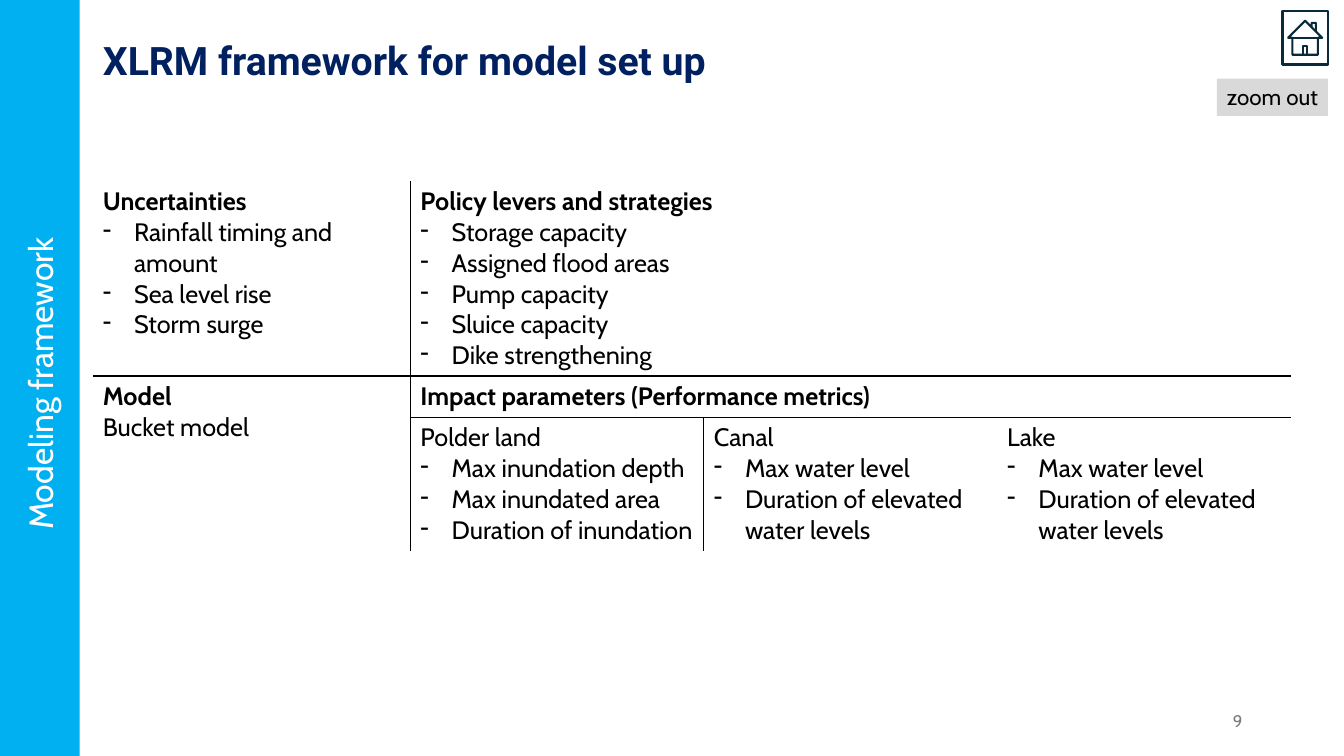
from lxml.etree import SubElement
from pptx import Presentation
from pptx.dml.color import RGBColor
from pptx.enum.shapes import MSO_SHAPE
from pptx.enum.text import MSO_ANCHOR, PP_ALIGN
from pptx.oxml import parse_xml
from pptx.oxml.ns import nsdecls, qn
from pptx.util import Inches, Pt

NO_STYLE_NO_GRID = "{2D5ABB26-0587-4C30-8999-92F81FD0307C}"


def style(paragraph, size, color, bold=False, name="Cabin"):
    font = paragraph.font
    font.name, font.size, font.bold = name, Pt(size), bold
    font.color.rgb = RGBColor.from_string(color)


def add_label(left, top, width, height, text, size, color):
    box = page.shapes.add_textbox(Inches(left), Inches(top), Inches(width), Inches(height))
    box.text_frame.word_wrap = True
    box.text_frame.text = text
    style(box.text_frame.paragraphs[0], size, color)
    return box


deck = Presentation()
deck.slide_width, deck.slide_height = Inches(13.33), Inches(7.5)
page = deck.slides.add_slide(deck.slide_layouts[5])

# Title
title = page.shapes.title
title.left, title.top, title.width, title.height = map(Inches, (0.92, 0.1, 11.5, 1.05))
title.text_frame.text = "XLRM framework for model set up"
title.text_frame.vertical_anchor = MSO_ANCHOR.MIDDLE
heading = title.text_frame.paragraphs[0]
heading.alignment, heading.line_spacing = PP_ALIGN.LEFT, 0.9
style(heading, 28, "002060", bold=True, name="Roboto")

# XLRM table: (row, column) -> bold heading, plain line, dashed items
cells = {
    (0, 0): ("Uncertainties", "",
             ["Rainfall timing and amount", "Sea level rise", "Storm surge"]),
    (0, 1): ("Policy levers and strategies", "",
             ["Storage capacity", "Assigned flood areas", "Pump capacity",
              "Sluice capacity", "Dike strengthening"]),
    (1, 0): ("Model", "Bucket model", []),
    (1, 1): ("Impact parameters (Performance metrics)", "", []),
    (2, 1): ("", "Polder land",
             ["Max inundation depth", "Max inundated area", "Duration of inundation"]),
    (2, 2): ("", "Canal", ["Max water level", "Duration of elevated water levels"]),
    (2, 3): ("", "Lake", ["Max water level", "Duration of elevated water levels"]),
}
column_widths = [3.15, 2.91, 2.91, 2.91]
row_heights = [1.93, 0.41, 1.32]
frame = page.shapes.add_table(3, 4, Inches(0.92), Inches(1.8),
                              Inches(sum(column_widths)), Inches(sum(row_heights)))
table = frame.table
table.first_row = table.horz_banding = False
table._tbl.tblPr.find(qn("a:tableStyleId")).text = NO_STYLE_NO_GRID
for column, width in zip(table.columns, column_widths):
    column.width = Inches(width)
for row, height in zip(table.rows, row_heights):
    row.height = Inches(height)
table.cell(0, 1).merge(table.cell(0, 3))
table.cell(1, 0).merge(table.cell(2, 0))
table.cell(1, 1).merge(table.cell(1, 3))

# One line to the right of the first column, one below the first row
for row in range(3):
    for column in range(4):
        cell = table.cell(row, column)
        cell.fill.background()
        sides = {"lnL": column == 1, "lnR": column == 0, "lnT": row == 1, "lnB": row == 0}
        drawn = [side for side, shown in sides.items() if shown]
        for position, side in enumerate(drawn):
            cell._tc.tcPr.insert(position, parse_xml(
                f'<a:{side} {nsdecls("a")} w="12700"><a:solidFill>'
                f'<a:srgbClr val="000000"/></a:solidFill></a:{side}>'))

for (row, column), (header, plain, items) in cells.items():
    text_frame = table.cell(row, column).text_frame
    lines = [line for line in (header, plain) if line] + items
    first_item = len(lines) - len(items)
    for index, line in enumerate(lines):
        paragraph = text_frame.paragraphs[0] if index == 0 else text_frame.add_paragraph()
        paragraph.text = line
        if index >= first_item:
            properties = paragraph._p.get_or_add_pPr()
            properties.set("marL", str(Inches(0.31)))
            properties.set("indent", str(-Inches(0.31)))
            SubElement(properties, qn("a:buChar")).set("char", "-")
        style(paragraph, 18, "000000", bold=line == header)

# Navigation controls
zoom_out = add_label(12.07, 0.78, 1.1, 0.37, "zoom out", 16, "000000")
zoom_out.text_frame.word_wrap = False
zoom_out.fill.solid()
zoom_out.fill.fore_color.rgb = RGBColor.from_string("D9D9D9")

home = page.shapes.add_shape(MSO_SHAPE.ACTION_BUTTON_HOME, Inches(12.72), Inches(0.11),
                             Inches(0.45), Inches(0.53))
home.shadow.inherit = False
home.fill.background()
home.line.color.rgb = RGBColor.from_string("092A39")
home.line.width = Pt(1.5)

# Section sidebar
sidebar = page.shapes.add_shape(MSO_SHAPE.RECTANGLE, 0, 0, Inches(0.79), deck.slide_height)
sidebar.shadow.inherit = False
sidebar.fill.solid()
sidebar.fill.fore_color.rgb = RGBColor.from_string("00B0F0")
sidebar.line.fill.background()
section = add_label(-1.35, 3.36, 3.49, 0.5, "Modeling framework", 24, "FFFFFF")
section.rotation = 270

# Page number
number = add_label(9.42, 6.95, 3, 0.4, "9", 12, "797979")
number.text_frame.vertical_anchor = MSO_ANCHOR.MIDDLE
number.text_frame.paragraphs[0].alignment = PP_ALIGN.RIGHT

deck.save("out.pptx")
